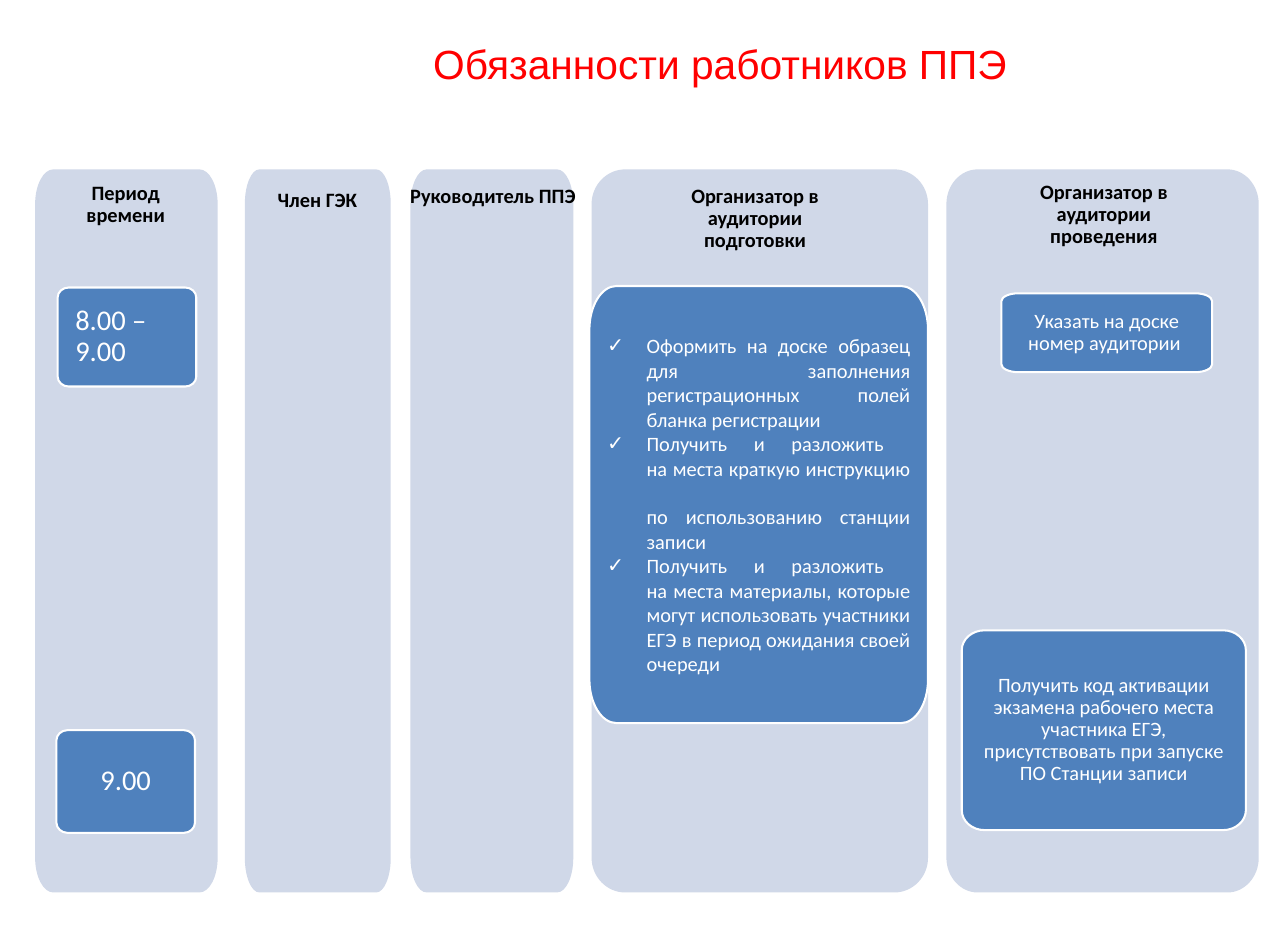
from copy import deepcopy

from lxml.etree import SubElement
from pptx import Presentation
from pptx.dml.color import RGBColor
from pptx.enum.text import MSO_ANCHOR, PP_ALIGN
from pptx.oxml.ns import qn
from pptx.util import Inches, Pt

WIDE, HIGH = Inches(17.57), Inches(12.79)
PALE = RGBColor(0xD0, 0xD8, 0xE8)
BLUE = RGBColor(0x4F, 0x81, 0xBD)
WHITE = RGBColor(0xFF, 0xFF, 0xFF)
BLACK = RGBColor(0x00, 0x00, 0x00)
RED = RGBColor(0xFF, 0x00, 0x00)

TOP, TALL = 18.06, 77.09
COLUMNS = [(2.73, 14.17), (19.01, 11.33), (31.87, 12.64),
           (45.93, 26.12), (73.48, 24.25)]
HEADS = [
    ("Период времени", (3.47, 18.84, 12.58, 6.1)),
    ("Член ГЭК", (19.92, 19.55, 9.45, 3.75)),
    ("Руководитель ППЭ", (30.45, 19.08, 15.65, 6.1)),
    ("Организатор в аудитории подготовки", (50.26, 19.08, 16.73, 8.44)),
    ("Организатор в аудитории проведения", (77.63, 18.69, 16.16, 8.44)),
]
CARDS = [
    ("8.00 – 9.00", (4.48, 30.65, 10.76, 10.56), 28, PP_ALIGN.LEFT),
    ("9.00", (4.38, 77.84, 10.76, 10.95), 28, PP_ALIGN.CENTER),
    ("Указать на доске номер аудитории ",
     (77.75, 31.27, 16.36, 8.41), 20, PP_ALIGN.CENTER),
    ("Получить код активации экзамена рабочего места участника ЕГЭ, "
     "присутствовать при запуске ПО Станции записи",
     (74.67, 67.2, 22.06, 21.3), 20, PP_ALIGN.CENTER),
]
TASKS = [
    "Оформить на доске образец для заполнения регистрационных полей "
    "бланка регистрации ",
    "Получить и разложить \nна места краткую инструкцию \n"
    "по использованию станции записи ",
    "Получить и разложить \nна места материалы, которые могут "
    "использовать участники ЕГЭ в период ожидания своей очереди",
]


def across(share):
    """Turn a percentage of the slide's width into a length."""
    return round(WIDE * share / 100)


def down(share):
    """Turn a percentage of the slide's height into a length."""
    return round(HIGH * share / 100)


def place(area):
    """Turn an area in percentages into left, top, width and height."""
    x, y, w, h = area
    return across(x), down(y), across(w), down(h)


def bend(line, start, tip, end):
    """Turn a straight corner segment into a curve around its tip."""
    line.tag = qn("a:cubicBezTo")
    for child in list(line):
        line.remove(child)
    pulls = [[round(a + 0.55 * (b - a)) for a, b in zip(dot, tip)]
             for dot in (start, end)]
    for x, y in (*pulls, end):
        SubElement(line, qn("a:pt"), x=str(x), y=str(y))


def panel(slide, area, bow, fill, line=None):
    """Draw a box whose oval corners are shares of its own sides."""
    x, y, w, h = place(area)
    rx, ry = round(w * bow[0]), round(h * bow[1])
    dots = [(0, ry), (rx, 0), (w - rx, 0), (w, ry),
            (w, h - ry), (w - rx, h), (rx, h), (0, h - ry)]
    tips = [(0, 0), (w, 0), (w, h), (0, h)]
    pen = slide.shapes.build_freeform(*dots[0])
    pen.add_line_segments(dots[1:], close=True)
    shape = pen.convert_to_shape(x, y)
    sides = list(shape._element.iter(qn("a:lnTo")))
    for turn, tip in enumerate(tips):
        bend(sides[2 * turn], dots[2 * turn], tip, dots[2 * turn + 1])
    shape.shadow.inherit = False
    shape.fill.solid()
    shape.fill.fore_color.rgb = fill
    if line is None:
        shape.line.fill.background()
    else:
        shape.line.color.rgb = line
        shape.line.width = Pt(2)
    return shape


def frame(shape, side, edge, anchor):
    """Set up the text frame of a shape and return it."""
    text = shape.text_frame
    text.word_wrap = True
    text.vertical_anchor = anchor
    text.margin_left = text.margin_right = across(side)
    text.margin_top = text.margin_bottom = down(edge)
    return text


def write(para, words, size, tint, align, gap=1.0, bold=False, face="Calibri"):
    """Fill a paragraph with one run for each line of words."""
    para.alignment = align
    para.line_spacing = gap
    for row, line in enumerate(words.split("\n")):
        if row:
            para.add_line_break()
            para._p[-1].append(deepcopy(run.font._rPr))
        run = para.add_run()
        run.text = line
        run.font.name = face
        run.font.size = Pt(size)
        run.font.bold = bold
        run.font.color.rgb = tint


def tick(para):
    """Give a paragraph a hanging check mark."""
    props = para._p.get_or_add_pPr()
    hang = across(3.07)
    props.set("marL", str(hang))
    props.set("indent", str(-hang))
    SubElement(props, qn("a:buFont")).set("typeface", "Arial")
    SubElement(props, qn("a:buChar")).set("char", "✓")


def label(slide, words, area, size, tint, anchor, **style):
    """Add a centred line of text without a box."""
    box = slide.shapes.add_textbox(*place(area))
    text = frame(box, 0.97, 0.7, anchor)
    write(text.paragraphs[0], words, size, tint, PP_ALIGN.CENTER, **style)


def card(slide, area):
    """Add a blue card and return its text frame."""
    shape = panel(slide, area, (0.08, 0.1), BLUE, WHITE)
    return frame(shape, 1.37, 1.56, MSO_ANCHOR.MIDDLE)


def tasks(slide, items, area):
    """Add a card with a checked list."""
    text = card(slide, area)
    for row, words in enumerate(items):
        para = text.add_paragraph() if row else text.paragraphs[0]
        tick(para)
        write(para, words, 20, WHITE, PP_ALIGN.JUSTIFY)


def main():
    """Build the slide and save it."""
    deck = Presentation()
    deck.slide_width, deck.slide_height = WIDE, HIGH
    slide = deck.slides.add_slide(deck.slide_layouts[6])
    for left, width in COLUMNS:
        panel(slide, (left, TOP, width, TALL), (0.1, 0.048), PALE)
    for words, area, size, align in CARDS:
        para = card(slide, area).paragraphs[0]
        write(para, words, size, WHITE, align, gap=0.9)
    tasks(slide, TASKS, (45.76, 30.49, 26.29, 46.6))
    for words, area in HEADS:
        label(slide, words, area, 20, BLACK, MSO_ANCHOR.TOP,
              gap=0.9, bold=True)
    label(slide, "Обязанности работников ППЭ", (21.86, 3.42, 68.07, 6.65),
          40, RED, MSO_ANCHOR.MIDDLE, face="Arial")
    deck.save("out.pptx")


if __name__ == "__main__":
    main()
